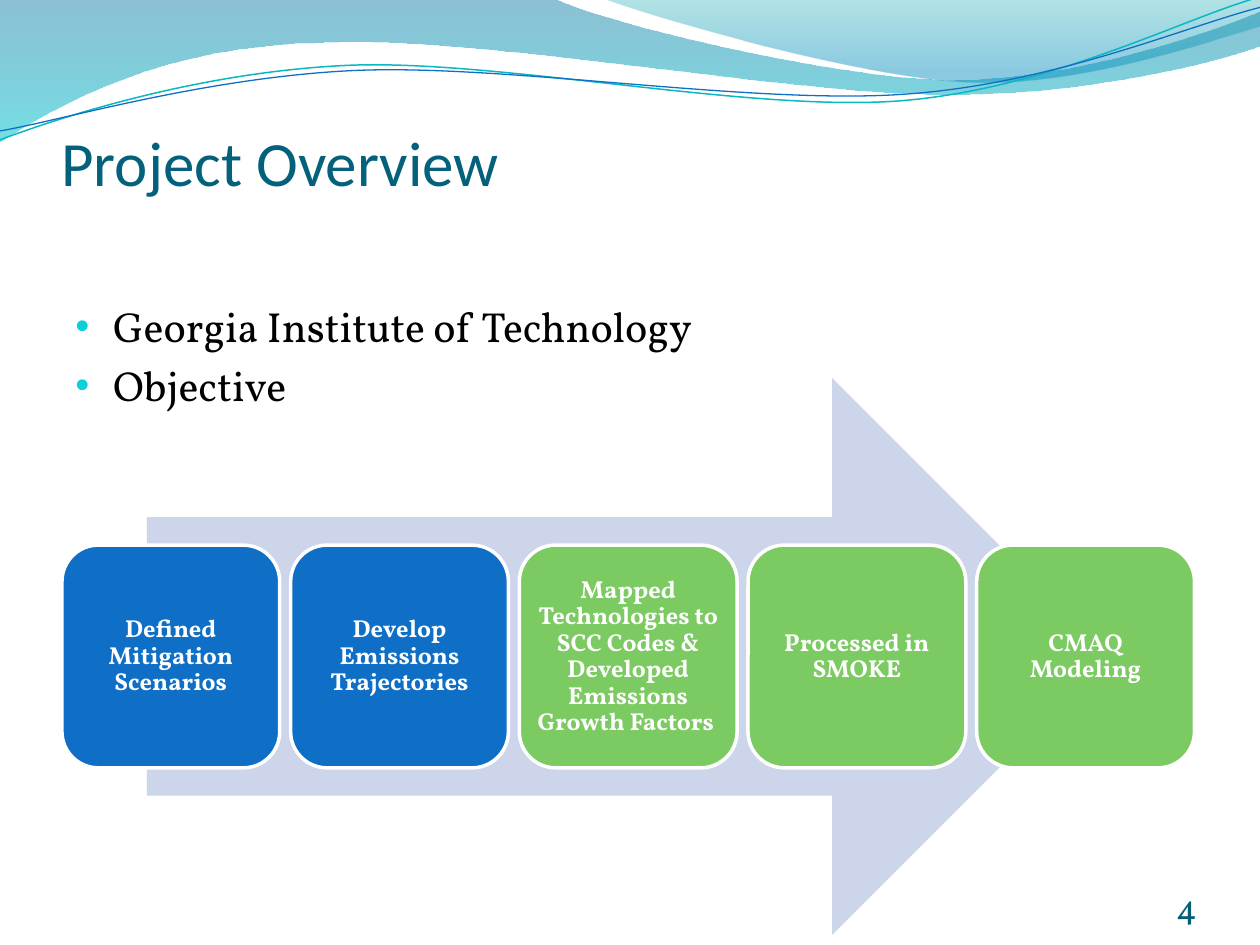
"""Build the project overview slide with its five-step process arrow."""
from lxml import etree
from pptx import Presentation
from pptx.dml.color import RGBColor
from pptx.enum.shapes import MSO_SHAPE
from pptx.enum.text import MSO_ANCHOR, PP_ALIGN
from pptx.oxml.ns import qn
from pptx.util import Cm, Pt

ARROW, ROUND_RECT = MSO_SHAPE.RIGHT_ARROW, MSO_SHAPE.ROUNDED_RECTANGLE
TOP, MIDDLE, BOTTOM = MSO_ANCHOR.TOP, MSO_ANCHOR.MIDDLE, MSO_ANCHOR.BOTTOM
LEFT, CENTER, RIGHT = PP_ALIGN.LEFT, PP_ALIGN.CENTER, PP_ALIGN.RIGHT

BLUE = RGBColor(0x0F, 0x6F, 0xC6)
GREEN = RGBColor(0x7C, 0xCA, 0x62)
PALE = RGBColor(0xCC, 0xD5, 0xEA)
TEAL = RGBColor(0x0A, 0xB8, 0xBF)
CYAN = RGBColor(0x0B, 0xD0, 0xD9)
TITLE_COLOR = RGBColor(0x04, 0x61, 0x7B)
NUMBER_COLOR = RGBColor(0x04, 0x5C, 0x75)
WHITE = RGBColor(0xFF, 0xFF, 0xFF)
BLACK = RGBColor(0, 0, 0)
HEAD_FONT, BODY_FONT, BULLET_FONT = "Calibri", "Vollkorn", "Arial"

TITLE = "Project Overview"
BULLETS = ["Georgia Institute of Technology", "Objective"]
NUMBER = "4"
STEPS = [
    ("Defined Mitigation Scenarios", BLUE),
    ("Develop Emissions Trajectories", BLUE),
    ("Mapped Technologies to SCC Codes & Developed Emissions Growth Factors ", GREEN),
    ("Processed in SMOKE", GREEN),
    ("CMAQ Modeling", GREEN),
]
STEP_LEFT, STEP_TOP, STEP_W, STEP_H, STEP_PITCH = 1.25, 10.99, 4.39, 4.49, 4.61

WAVES = [
    ((0, -0.03),
     [[(11.18, -0.03)],
      [(12.09, 0.43), (16.87, 1.6), (19.25, 1.6)],
      [(21.67, 1.6), (24.33, 0.66), (25.4, 0.23)],
      [(25.43, 0.91)],
      [(24.97, 1.12), (22.1, 1.93), (18.95, 1.9)],
      [(15.8, 1.9), (9.7, 0.71), (6.53, 0.86)],
      [(3.28, 0.89), (1.17, 2.11), (-0.03, 2.87)]],
     [(0, RGBColor(0x00, 0x74, 0xA1), 45), (1, RGBColor(0x00, 0xC6, 0xCF), 55)]),
    ((12.17, -0.03),
     [[(12.93, 0.28), (17.32, 1.57), (19.53, 1.65)],
      [(21.74, 1.75), (24.41, 0.81), (25.4, 0.53)],
      [(25.4, 0)]],
     [(0, RGBColor(0x00, 0xA1, 0xA9), 30), (0.8, RGBColor(0x00, 0x8B, 0xBF), 45)]),
]
RIPPLES = [
    ((-0.05, 2.22),
     [[(1.19, 1.82), (4.02, 1.04), (7.05, 1.05)],
      [(10.05, 1.07), (15.02, 2.37), (18.08, 2.29)],
      [(21.13, 2.2), (23.86, 0.91), (25.41, 0.55)]], TEAL, 0.85),
    ((-0.04, 2.04),
     [[(1.16, 1.9), (4.17, 1.15), (7.2, 1.16)],
      [(10.25, 1.18), (15.13, 2.23), (18.19, 2.16)],
      [(21.21, 2.1), (23.93, 1.06), (25.45, 0.75)]], BLUE, 0.75),
]
RIPPLE_TILT = 357.3


def add_path(shapes, start, segments, close):
    """Draw a freeform of straight lines and cubic curves."""
    builder = shapes.build_freeform(*map(Cm, start))
    builder.add_line_segments([(Cm(x), Cm(y)) for seg in segments for x, y in seg], close=close)
    sp = builder.convert_to_shape()
    sp.shadow.inherit = False
    lines = iter(list(sp._element.iter(qn("a:lnTo"))))
    for seg in segments:
        first, *others = [next(lines) for _ in seg]
        if others:
            first.tag = qn("a:cubicBezTo")
        for line in others:
            first.append(line[0])
            line.getparent().remove(line)
    return sp


def add_wave(shapes, start, segments, stops):
    """Draw a filled wave with a translucent vertical gradient."""
    sp = add_path(shapes, start, segments, True)
    sp.line.fill.background()
    sp.fill.gradient()
    sp.fill.gradient_angle = 270
    for stop, (pos, color, alpha) in zip(sp.fill.gradient_stops, stops):
        stop.position = pos
        stop.color.rgb = color
    colors = sp._element.spPr.iter(qn("a:srgbClr"))
    for clr, (pos, color, alpha) in zip(colors, stops):
        etree.SubElement(clr, qn("a:alpha"), val=str(alpha * 1000))


def add_ripple(shapes, start, segments, color, width):
    """Draw a thin tilted open curve."""
    sp = add_path(shapes, start, segments, False)
    sp.rotation = RIPPLE_TILT
    sp.fill.background()
    sp.line.color.rgb = color
    sp.line.width = Pt(width)


def add_block(shapes, kind, box, fill):
    """Add a filled preset shape without an outline."""
    sp = shapes.add_shape(kind, *map(Cm, box))
    sp.shadow.inherit = False
    sp.fill.solid()
    sp.fill.fore_color.rgb = fill
    sp.line.fill.background()
    return sp


def set_text(sp, lines, size, color, font=BODY_FONT, bold=False, align=LEFT,
             anchor=TOP, insets=(0, 0, 0, 0)):
    """Fill a shape with formatted paragraphs and return its text frame."""
    tf = sp.text_frame
    tf.word_wrap = True
    tf.vertical_anchor = anchor
    tf.margin_left, tf.margin_top, tf.margin_right, tf.margin_bottom = map(Cm, insets)
    tf.text = "\n".join(lines)
    for p in tf.paragraphs:
        p.alignment = align
        for r in p.runs:
            r.font.name, r.font.size, r.font.bold = font, Pt(size), bold
            r.font.color.rgb = color
    return tf


def add_bullet(p):
    """Give a paragraph a hanging coloured bullet."""
    pPr = p._p.get_or_add_pPr()
    pPr.set("marL", str(Cm(0.76)))
    pPr.set("indent", str(Cm(-0.76)))
    clr = etree.SubElement(pPr, qn("a:buClr"))
    etree.SubElement(clr, qn("a:srgbClr"), val=str(CYAN))
    etree.SubElement(pPr, qn("a:buSzPct"), val="95000")
    etree.SubElement(pPr, qn("a:buFont"), typeface=BULLET_FONT)
    etree.SubElement(pPr, qn("a:buChar"), char="•")


def main():
    """Assemble and save the slide."""
    prs = Presentation()
    prs.slide_width, prs.slide_height = Cm(25.4), Cm(19.05)
    shapes = prs.slides.add_slide(prs.slide_layouts[6]).shapes

    for wave in WAVES:
        add_wave(shapes, *wave)
    for ripple in RIPPLES:
        add_ripple(shapes, *ripple)

    title = shapes.add_textbox(Cm(1.24), Cm(2.34), Cm(22.86), Cm(3.18))
    set_text(title, [TITLE], 36, TITLE_COLOR, HEAD_FONT, anchor=BOTTOM, insets=(0, 0.13, 0, 1.63))

    add_block(shapes, ARROW, (2.96, 7.62, 19.43, 11.23), PALE)
    for i, (text, fill) in enumerate(STEPS):
        box = (STEP_LEFT + i * STEP_PITCH, STEP_TOP, STEP_W, STEP_H)
        sp = add_block(shapes, ROUND_RECT, box, fill)
        sp.line.color.rgb = WHITE
        sp.line.width = Pt(2)
        tf = set_text(sp, [text], 14, WHITE, bold=True, align=CENTER, anchor=MIDDLE,
                      insets=(0.15, 0.15, 0.15, 0.15))
        tf.paragraphs[0].line_spacing = 0.9

    number = shapes.add_textbox(Cm(22.02), Cm(17.65), Cm(2.11), Cm(1.02))
    set_text(number, [NUMBER], 20, NUMBER_COLOR, align=RIGHT, anchor=BOTTOM)

    body = shapes.add_textbox(Cm(1.27), Cm(5.92), Cm(15.44), Cm(3.38))
    tf = set_text(body, BULLETS, 24, BLACK, insets=(0.25, 0.13, 0.25, 0.13))
    for p in tf.paragraphs:
        add_bullet(p)
    for p in tf.paragraphs[1:]:
        p.space_before = Pt(5.2)

    prs.save("out.pptx")


if __name__ == "__main__":
    main()
